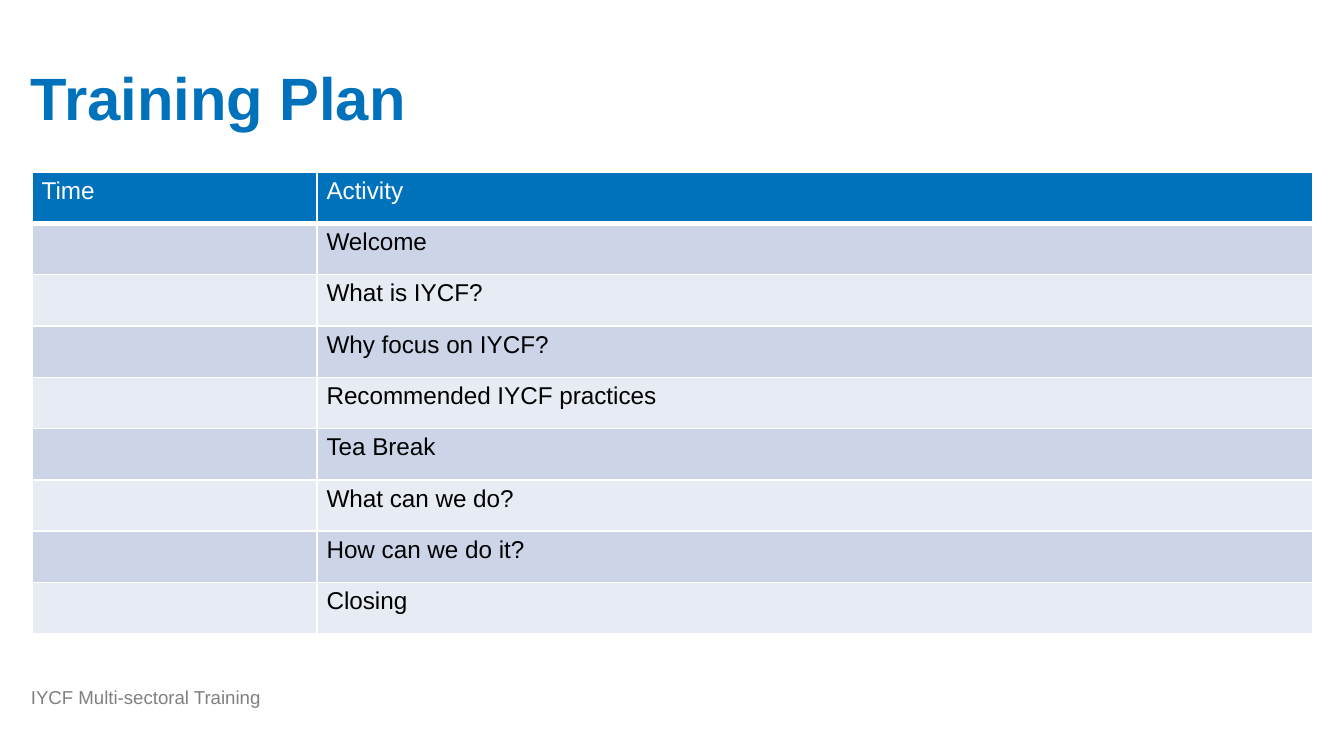
from lxml.etree import SubElement
from pptx import Presentation
from pptx.dml.color import RGBColor
from pptx.enum.text import MSO_ANCHOR
from pptx.oxml.ns import qn
from pptx.util import Inches, Pt

BLUE, WHITE, BLACK, GREY = "0072BC", "FFFFFF", "000000", "808080"
BANDS = ["CCD5E7", "E7EBF3"]
ACTIVITIES = [
    "Welcome",
    "What is IYCF?",
    "Why focus on IYCF?",
    "Recommended IYCF practices",
    "Tea Break",
    "What can we do?",
    "How can we do it?",
    "Closing",
]


def style(paragraph, size, color, bold=False):
    font = paragraph.font
    font.name, font.size, font.bold = "Arial", Pt(size), bold
    font.color.rgb = RGBColor.from_string(color)


def add_text(text, left, top, width, height, anchor):
    """Add a one-paragraph text box without margins and return its paragraph."""
    frame = slide.shapes.add_textbox(
        Inches(left), Inches(top), Inches(width), Inches(height)).text_frame
    frame.word_wrap = True
    frame.vertical_anchor = anchor
    frame.margin_left = frame.margin_right = 0
    frame.margin_top = frame.margin_bottom = 0
    frame.text = text
    return frame.paragraphs[0]


prs = Presentation()
prs.slide_width = Inches(10)
prs.slide_height = Inches(10) * 9 // 16
slide = prs.slides.add_slide(prs.slide_layouts[6])

title = add_text("Training Plan", 0.23, 0.22, 9.53, 1.06, MSO_ANCHOR.MIDDLE)
title.line_spacing = 0.9
style(title, 32, BLUE, bold=True)

rows = [("Time", "Activity")] + [("", activity) for activity in ACTIVITIES]
plan = slide.shapes.add_table(
    len(rows), 2, Inches(0.24), Inches(1.28), Inches(9.53), Inches(3.44)).table
plan.columns[0].width = Inches(2.12)
plan.columns[1].width = Inches(7.41)

for r, row in enumerate(rows):
    for c, text in enumerate(row):
        cell = plan.cell(r, c)
        cell.text = text
        cell.margin_left = cell.margin_right = Inches(0.07)
        cell.margin_top = cell.margin_bottom = Inches(0.04)
        bottom = 1 if r else 3
        for side, width in (("L", 1), ("R", 1), ("T", 1), ("B", bottom)):
            line = SubElement(cell._tc.get_or_add_tcPr(), qn("a:ln" + side),
                              w=str(Pt(width)))
            fill = SubElement(line, qn("a:solidFill"))
            SubElement(fill, qn("a:srgbClr"), val=WHITE)
        cell.fill.solid()
        cell.fill.fore_color.rgb = RGBColor.from_string(
            BANDS[(r - 1) % 2] if r else BLUE)
        style(cell.text_frame.paragraphs[0], 13, BLACK if r else WHITE)

footer = add_text("IYCF Multi-sectoral Training", 0.23, 5.02, 4.62, 0.25,
                  MSO_ANCHOR.BOTTOM)
style(footer, 10, GREY)

prs.save("out.pptx")
